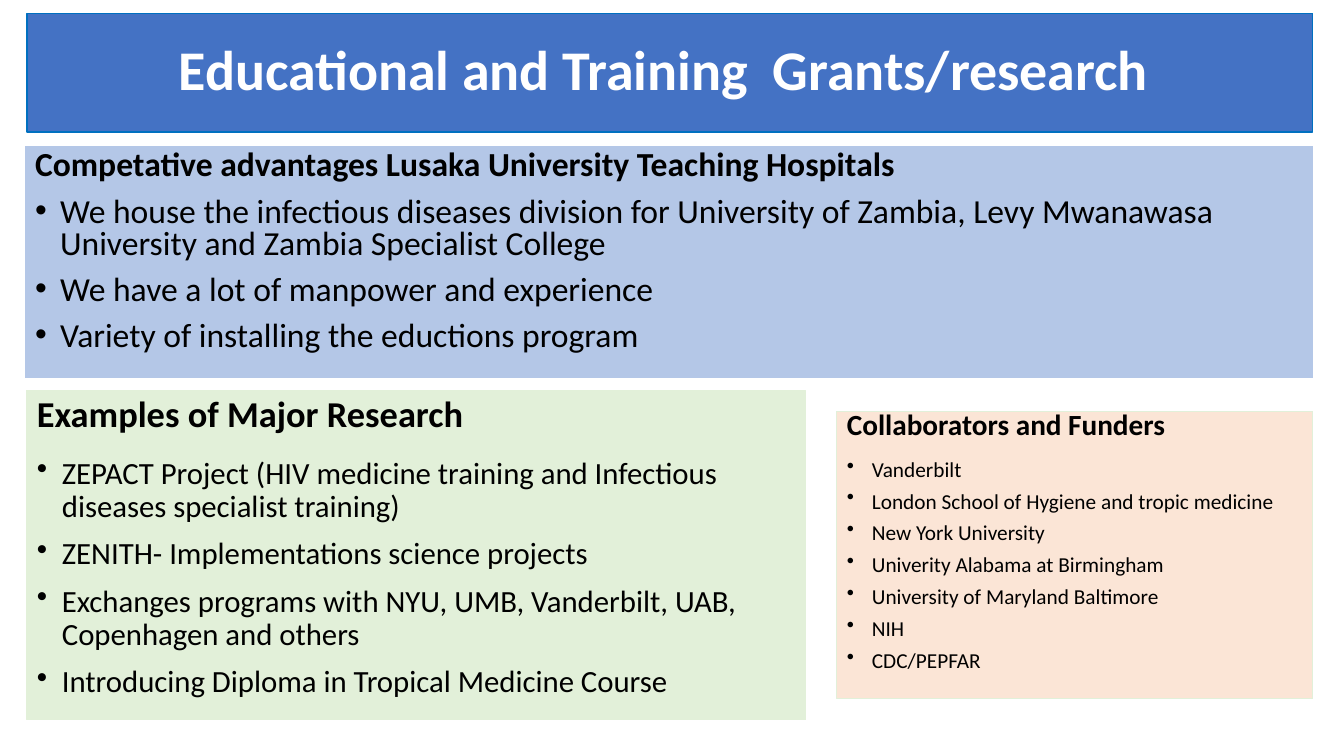
import pptx
import pptx.dml.color
import pptx.enum.shapes
import pptx.enum.text
import pptx.oxml
import pptx.oxml.ns
import pptx.util
from dataclasses import dataclass

EMU_PER_PX = 914400 / 100.8
BULLET_INDENT = 25


@dataclass(frozen=True)
class Theme:
    font: str = "Calibri"
    title_size: float = 40
    advantages_size: float = 24
    research_heading_size: float = 26
    research_size: float = 22
    funders_heading_size: float = 20.9
    funders_size: float = 15.2
    white: str = "FFFFFF"
    black: str = "000000"
    title_fill: str = "4472C4"
    title_line: str = "0070C0"
    advantages_fill: str = "B4C7E7"
    research_fill: str = "E2F0D9"
    funders_fill: str = "FBE5D6"
    panel_line: str = "E2F0D9"


THEME = Theme()

ADVANTAGES = [
    "We house the infectious diseases division for University of Zambia, "
    "Levy Mwanawasa University and Zambia Specialist College",
    "We have a lot of manpower and experience",
    "Variety of installing the eductions program",
]
RESEARCH = [
    "ZEPACT Project (HIV medicine training and Infectious diseases specialist training)",
    "ZENITH- Implementations science projects",
    "Exchanges programs with NYU, UMB, Vanderbilt, UAB, Copenhagen and others",
    "Introducing Diploma in Tropical Medicine Course",
]
FUNDERS = [
    "Vanderbilt",
    "London School of Hygiene and tropic medicine",
    "New York University",
    "Univerity Alabama at Birmingham",
    "University of Maryland Baltimore",
    "NIH",
    "CDC/PEPFAR",
]


def px(length):
    return pptx.util.Emu(round(length * EMU_PER_PX))


def rgb(color):
    return pptx.dml.color.RGBColor.from_string(color)


def place(box, left, top, width, height):
    box.left, box.top, box.width, box.height = map(px, (left, top, width, height))


def paint(box, fill, line=None):
    box.fill.solid()
    box.fill.fore_color.rgb = rgb(fill)
    if line:
        box.line.color.rgb = rgb(line)
        box.line.width = pptx.util.Pt(0.75)
    else:
        box.line.fill.background()


def prepare_text(box, anchor):
    frame = box.text_frame
    frame.word_wrap = True
    frame.auto_size = pptx.enum.text.MSO_AUTO_SIZE.NONE
    frame.vertical_anchor = anchor
    return frame


def style(para, size, color, bold, spacing, before=0, after=0, align="LEFT"):
    para.alignment = pptx.enum.text.PP_ALIGN[align]
    para.line_spacing = spacing
    para.space_before = pptx.util.Pt(before)
    para.space_after = pptx.util.Pt(after)
    para.font.name = THEME.font
    para.font.size = pptx.util.Pt(size)
    para.font.bold = bold
    para.font.color.rgb = rgb(color)


def set_bullet(para, char=None):
    """Give the paragraph a hanging bullet, or clear the inherited one."""
    properties = para._p.get_or_add_pPr()
    indent = px(BULLET_INDENT) if char else 0
    properties.set("marL", str(indent))
    properties.set("indent", str(-indent))
    tag = f'a:buChar char="{char}"' if char else "a:buNone"
    bullet = pptx.oxml.parse_xml(f"<{tag} {pptx.oxml.ns.nsdecls('a')}/>")
    properties.insert_element_before(bullet, "a:tabLst", "a:defRPr", "a:extLst")


def fill_title(box, text):
    place(box, 27, 13, 1286, 119)
    paint(box, THEME.title_fill, THEME.title_line)
    para = prepare_text(box, pptx.enum.text.MSO_ANCHOR.MIDDLE).paragraphs[0]
    para.text = text
    style(para, THEME.title_size, THEME.white, True, 0.9, align="CENTER")


def fill_list(box, heading, items, heading_size, item_size, spacing, before, after):
    """Write a bold heading followed by bulleted items."""
    frame = prepare_text(box, pptx.enum.text.MSO_ANCHOR.TOP)
    para = frame.paragraphs[0]
    para.text = heading
    style(para, heading_size, THEME.black, True, spacing, before, after)
    set_bullet(para)
    for item in items:
        para = frame.add_paragraph()
        para.text = item
        style(para, item_size, THEME.black, False, spacing, before=10)
        set_bullet(para, "•")


def add_panel(slide, left, top, width, height, fill):
    box = slide.shapes.add_shape(
        pptx.enum.shapes.MSO_SHAPE.RECTANGLE, *map(px, (left, top, width, height)))
    box.shadow.inherit = False
    paint(box, fill, THEME.panel_line)
    return box


def main():
    deck = pptx.Presentation()
    deck.slide_width = px(1344)
    deck.slide_height = px(756)
    slide = deck.slides.add_slide(deck.slide_layouts.get_by_name("Title and Content"))

    fill_title(slide.shapes.title, "Educational and Training  Grants/research ")

    advantages = slide.placeholders[1]
    place(advantages, 25, 146, 1288, 232)
    paint(advantages, THEME.advantages_fill)
    fill_list(advantages, "Competative advantages Lusaka University Teaching Hospitals",
              ADVANTAGES, THEME.advantages_size, THEME.advantages_size, 0.8, 10, 0)

    research = add_panel(slide, 27, 391, 779, 329, THEME.research_fill)
    fill_list(research, "Examples of Major Research", RESEARCH,
              THEME.research_heading_size, THEME.research_size, 0.9, 4, 6)

    funders = add_panel(slide, 837, 411, 476, 288, THEME.funders_fill)
    fill_list(funders, "Collaborators and Funders", FUNDERS,
              THEME.funders_heading_size, THEME.funders_size, 0.7, 4, 6)

    deck.save("out.pptx")


if __name__ == "__main__":
    main()
